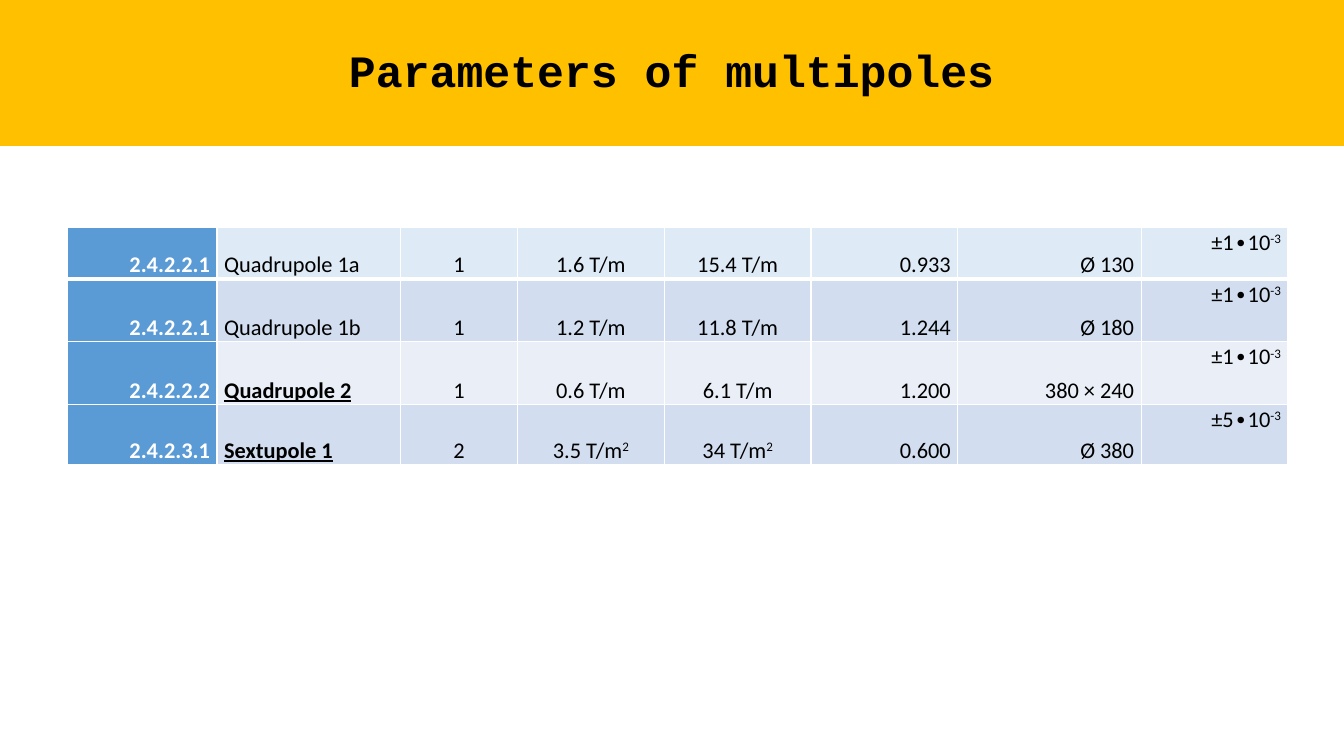
"""Build the slide with the parameters of multipoles."""
from dataclasses import dataclass

from lxml import etree
from pptx import Presentation
from pptx.dml.color import RGBColor
from pptx.enum.shapes import MSO_SHAPE
from pptx.enum.text import MSO_ANCHOR, PP_ALIGN
from pptx.oxml.ns import qn
from pptx.util import Cm, Pt

RECTANGLE = MSO_SHAPE.RECTANGLE
TOP, MIDDLE, BOTTOM = MSO_ANCHOR.TOP, MSO_ANCHOR.MIDDLE, MSO_ANCHOR.BOTTOM
LEFT, CENTER, RIGHT = PP_ALIGN.LEFT, PP_ALIGN.CENTER, PP_ALIGN.RIGHT

AMBER = RGBColor(0xFF, 0xC0, 0x00)
BLACK = RGBColor(0x00, 0x00, 0x00)
WHITE = RGBColor(0xFF, 0xFF, 0xFF)
BLUE = RGBColor(0x5B, 0x9B, 0xD5)
ICE = RGBColor(0xDE, 0xEB, 0xF7)
DARK_BAND = RGBColor(0xD2, 0xDE, 0xEF)
LIGHT_BAND = RGBColor(0xEA, 0xEF, 0xF7)


@dataclass(frozen=True)
class Column:
    width: float
    align: PP_ALIGN
    anchor: MSO_ANCHOR = BOTTOM


@dataclass(frozen=True)
class Multipole:
    values: tuple[str, ...]
    height: float
    fill: RGBColor
    emphasized: bool = False
    bottom_border: float = 1


COLUMNS = (
    Column(3.77, RIGHT),
    Column(4.62, LEFT),
    Column(2.95, CENTER),
    Column(3.7, CENTER),
    Column(3.7, CENTER),
    Column(3.7, RIGHT),
    Column(4.62, RIGHT),
    Column(3.7, RIGHT, TOP),
)
MULTIPOLES = (
    Multipole(("2.4.2.2.1", "Quadrupole 1a", "1", "1.6 T/m", "15.4 T/m",
               "0.933", "Ø 130", "±1∙10^-3"), 1.31, ICE, bottom_border=3),
    Multipole(("2.4.2.2.1", "Quadrupole 1b", "1", "1.2 T/m", "11.8 T/m",
               "1.244", "Ø 180", "±1∙10^-3"), 1.58, DARK_BAND),
    Multipole(("2.4.2.2.2", "Quadrupole 2", "1", "0.6 T/m", "6.1 T/m",
               "1.200", "380 × 240", "±1∙10^-3"), 1.58, LIGHT_BAND, True),
    Multipole(("2.4.2.3.1", "Sextupole 1", "2", "3.5 T/m^2", "34 T/m^2",
               "0.600", "Ø 380", "±5∙10^-3"), 1.52, DARK_BAND, True),
)


def add_title(slide, text: str, width: int) -> None:
    banner = slide.shapes.add_shape(RECTANGLE, 0, 0, width, Cm(3.68))
    banner.shadow.inherit = False
    banner.fill.solid()
    banner.fill.fore_color.rgb = AMBER
    banner.line.fill.background()
    banner.text_frame.vertical_anchor = MIDDLE
    title = banner.text_frame.paragraphs[0]
    title.text = text
    title.alignment = CENTER
    title.line_spacing = 0.9
    title.font.name = "Courier New"
    title.font.size = Pt(32)
    title.font.bold = True
    title.font.color.rgb = BLACK


def set_borders(cell, bottom: float) -> None:
    properties = cell._tc.get_or_add_tcPr()
    for side, width in (("L", 1), ("R", 1), ("T", 1), ("B", bottom)):
        border = etree.SubElement(properties, qn(f"a:ln{side}"), w=str(Pt(width)))
        solid = etree.SubElement(border, qn("a:solidFill"))
        etree.SubElement(solid, qn("a:srgbClr"), val=str(WHITE))


def fill_cell(cell, column: Column, multipole: Multipole, index: int) -> None:
    is_code = index == 0
    is_emphasized_name = index == 1 and multipole.emphasized
    set_borders(cell, multipole.bottom_border)
    cell.fill.solid()
    cell.fill.fore_color.rgb = BLUE if is_code else multipole.fill
    cell.vertical_anchor = column.anchor
    cell.margin_left = cell.margin_right = Cm(0.18)
    cell.margin_top = cell.margin_bottom = 0

    value = cell.text_frame.paragraphs[0]
    value.alignment = column.align
    value.line_spacing = 1.07
    value.space_after = Pt(8)
    value.font.name = "Calibri"
    value.font.size = Pt(16)
    value.font.bold = is_code or is_emphasized_name
    value.font.underline = is_emphasized_name
    value.font.color.rgb = WHITE if is_code else BLACK
    base, _, exponent = multipole.values[index].partition("^")
    value.add_run().text = base
    if exponent:
        superscript = value.add_run()
        superscript.text = exponent
        superscript._r.get_or_add_rPr().set("baseline", "30000")


def add_parameters(slide) -> None:
    width = sum(column.width for column in COLUMNS)
    height = sum(multipole.height for multipole in MULTIPOLES)
    table = slide.shapes.add_table(len(MULTIPOLES), len(COLUMNS), Cm(1.7), Cm(5.72),
                                   Cm(width), Cm(height)).table
    table.first_row = False
    table.horz_banding = False
    for index, column in enumerate(COLUMNS):
        table.columns[index].width = Cm(column.width)
    for row, multipole in enumerate(MULTIPOLES):
        table.rows[row].height = Cm(multipole.height)
        for index, column in enumerate(COLUMNS):
            fill_cell(table.cell(row, index), column, multipole, index)


def main() -> None:
    presentation = Presentation()
    presentation.slide_width = Cm(33.87)
    presentation.slide_height = Cm(19.05)
    slide = presentation.slides.add_slide(presentation.slide_layouts[6])
    add_parameters(slide)
    add_title(slide, "Parameters of multipoles", presentation.slide_width)
    presentation.save("out.pptx")


if __name__ == "__main__":
    main()
